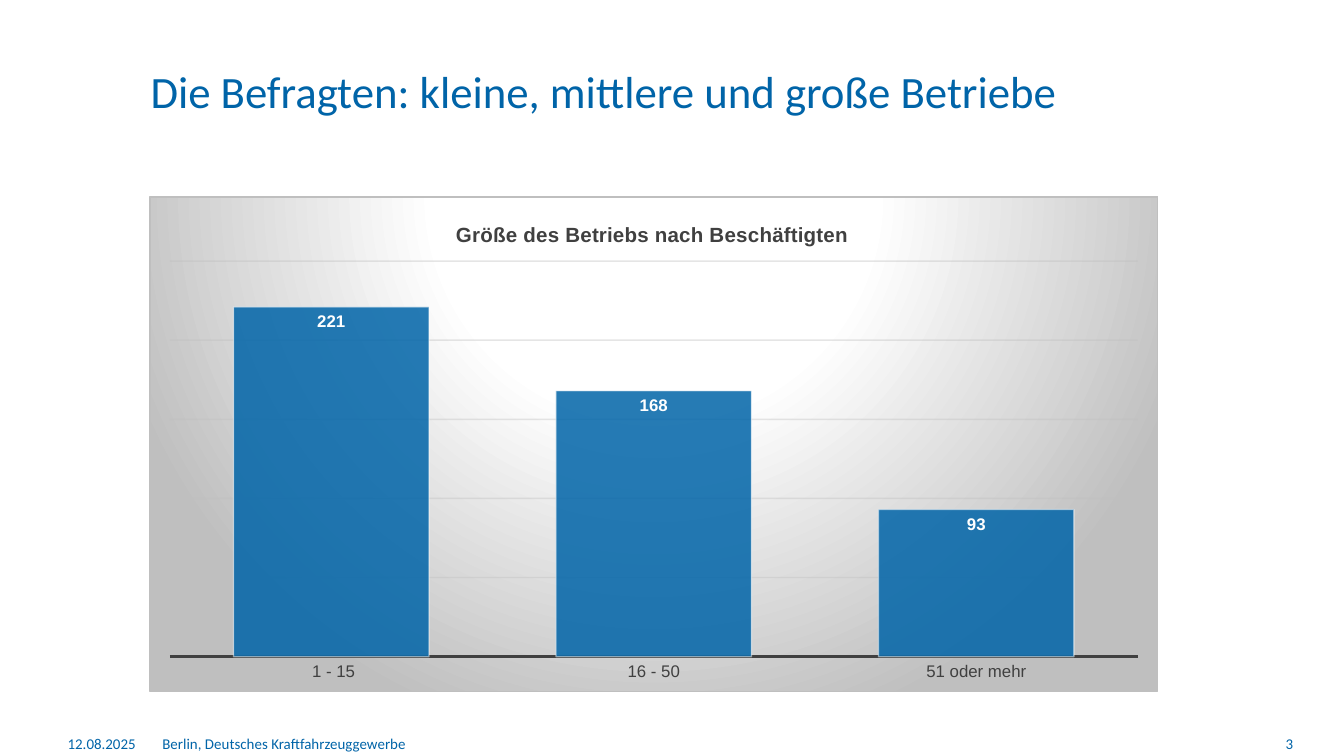
from typing import NamedTuple

from lxml import etree
from pptx import Presentation
from pptx.chart.data import CategoryChartData
from pptx.dml.color import RGBColor
from pptx.enum.chart import XL_CHART_TYPE, XL_LABEL_POSITION, XL_TICK_LABEL_POSITION, XL_TICK_MARK
from pptx.enum.text import MSO_ANCHOR, PP_ALIGN
from pptx.oxml import parse_xml
from pptx.oxml.ns import nsdecls, qn
from pptx.util import Inches, Pt

COLUMN = XL_CHART_TYPE.COLUMN_CLUSTERED
INSIDE = XL_LABEL_POSITION.INSIDE_END
NEXT = XL_TICK_LABEL_POSITION.NEXT_TO_AXIS
NO_TICK = XL_TICK_MARK.NONE
TOP, MIDDLE = MSO_ANCHOR.TOP, MSO_ANCHOR.MIDDLE
LEFT, RIGHT = PP_ALIGN.LEFT, PP_ALIGN.RIGHT

BLUE, DARK, GREY, WHITE = "0064A8", "404040", "BFBFBF", "FFFFFF"


class Label(NamedTuple):
    text: str
    left: float
    top: float
    width: float
    height: float
    size: float = 8
    align: PP_ALIGN = LEFT
    anchor: MSO_ANCHOR = MIDDLE
    insets: tuple = (0.1, 0.05, 0.1, 0.05)
    pitch: float | None = None


LABELS = [
    Label("Die Befragten: kleine, mittlere und große Betriebe", 0, 0.21, 9.72, 1.25,
          size=24, anchor=TOP, insets=(1.12, 0.12, 0.1, 0.05), pitch=39),
    Label("Berlin, Deutsches Kraftfahrzeuggewerbe", 1.11, 5.44, 7.64, 0.19),
    Label("12.08.2025", 0, 5.44, 1.11, 0.19, align=RIGHT),
    Label("3", 9.17, 5.44, 0.55, 0.19, align=RIGHT),
]
SIZES = {" 1 - 15": 221, "16 - 50": 168, "51 oder mehr": 93}


def rgb(code: str) -> RGBColor:
    return RGBColor.from_string(code)


def style(font, size: float, color: str, name: str = "Arial", bold: bool = False) -> None:
    font.name, font.size, font.bold = name, Pt(size), bold
    font.color.rgb = rgb(color)


def fade(fill, share: int) -> None:
    """Set the opacity of a solid fill in percent."""
    tone = fill._xPr.find(qn("a:solidFill"))[0]
    etree.SubElement(tone, qn("a:alpha")).set("val", str(share * 1000))


def draw_line(line, color: str, width: float, share: int = 100) -> None:
    line.width = Pt(width)
    line.fill.solid()
    line.fill.fore_color.rgb = rgb(color)
    if share < 100:
        fade(line.fill, share)


def place(part, index: int, **spots: float) -> None:
    """Give a chart part a manual layout, in shares of the chart."""
    old = part.find(qn("c:layout"))
    if old is not None:
        part.remove(old)
    inner = '<c:layoutTarget val="inner"/>' if "w" in spots else ""
    modes = "".join(f'<c:{k}Mode val="edge"/>' for k in "xy")
    vals = "".join(f'<c:{k} val="{v}"/>' for k, v in spots.items())
    part.insert(index, parse_xml(
        f'<c:layout {nsdecls("c")}><c:manualLayout>{inner}{modes}{vals}'
        '</c:manualLayout></c:layout>'))


def shade(chart) -> None:
    """Fill the chart area with a round gradient and give it a border."""
    stops = "".join(f'<a:gs pos="{pos * 1000}"><a:srgbClr val="{tone}"/></a:gs>'
                    for pos, tone in ((0, WHITE), (39, WHITE), (100, GREY)))
    area = parse_xml(
        f'<c:spPr {nsdecls("c", "a")}><a:gradFill><a:gsLst>{stops}</a:gsLst>'
        '<a:path path="circle"><a:fillToRect l="50000" t="-80000" r="50000" b="180000"/>'
        f'</a:path></a:gradFill><a:ln w="{Pt(0.75)}"><a:solidFill>'
        f'<a:srgbClr val="{GREY}"/></a:solidFill></a:ln></c:spPr>')
    chart._chartSpace.find(qn("c:chart")).addnext(area)


def add_label(slide, label: Label) -> None:
    box = slide.shapes.add_textbox(*map(Inches, label[1:5]))
    frame = box.text_frame
    frame.word_wrap = True
    frame.vertical_anchor = label.anchor
    (frame.margin_left, frame.margin_top,
     frame.margin_right, frame.margin_bottom) = map(Inches, label.insets)
    para = frame.paragraphs[0]
    para.alignment = label.align
    if label.pitch:
        para.line_spacing = Pt(label.pitch)
    run = para.add_run()
    run.text = label.text
    style(run.font, label.size, BLUE, "Calibri")


def add_bars(slide) -> None:
    data = CategoryChartData()
    data.categories = list(SIZES)
    data.add_series("Series 1", list(SIZES.values()))
    chart = slide.shapes.add_chart(
        COLUMN, Inches(1.11), Inches(1.46), Inches(7.51), Inches(3.69), data).chart
    style(chart.font, 10, "000000")
    chart.has_legend = False
    shade(chart)

    chart.has_title = True
    run = chart.chart_title.text_frame.paragraphs[0].add_run()
    run.text = "Größe des Betriebs nach Beschäftigten"
    style(run.font, 11, DARK, bold=True)
    place(chart.chart_title._element, 1, x=0.3, y=0.04)

    cats = chart.category_axis
    cats.major_tick_mark = cats.minor_tick_mark = NO_TICK
    cats.tick_label_position = NEXT
    cats._element.find(qn("c:lblOffset")).set("val", "0")
    style(cats.tick_labels.font, 9, DARK)
    draw_line(cats.format.line, DARK, 1.5)

    vals = chart.value_axis
    vals.visible = False
    vals.minimum_scale, vals.maximum_scale, vals.major_unit = 0, 250, 50
    draw_line(vals.major_gridlines.format.line, GREY, 0.75, 40)

    plot = chart.plots[0]
    plot.gap_width = 65
    plot.vary_by_categories = False
    place(chart._chartSpace.find(qn("c:chart")).find(qn("c:plotArea")), 0,
          x=0.02, y=0.13, w=0.96, h=0.8)

    bars = plot.series[0]
    bars.format.fill.solid()
    bars.format.fill.fore_color.rgb = rgb(BLUE)
    fade(bars.format.fill, 85)
    draw_line(bars.format.line, WHITE, 0.75, 50)
    tags = bars.data_labels
    tags.show_value = True
    tags.position = INSIDE
    style(tags.font, 9, WHITE, bold=True)


def main() -> None:
    deck = Presentation()
    deck.slide_width, deck.slide_height = Inches(10), Inches(10 * 9 / 16)
    slide = deck.slides.add_slide(deck.slide_layouts[6])
    for label in LABELS:
        add_label(slide, label)
    add_bars(slide)
    deck.save("out.pptx")


if __name__ == "__main__":
    main()
